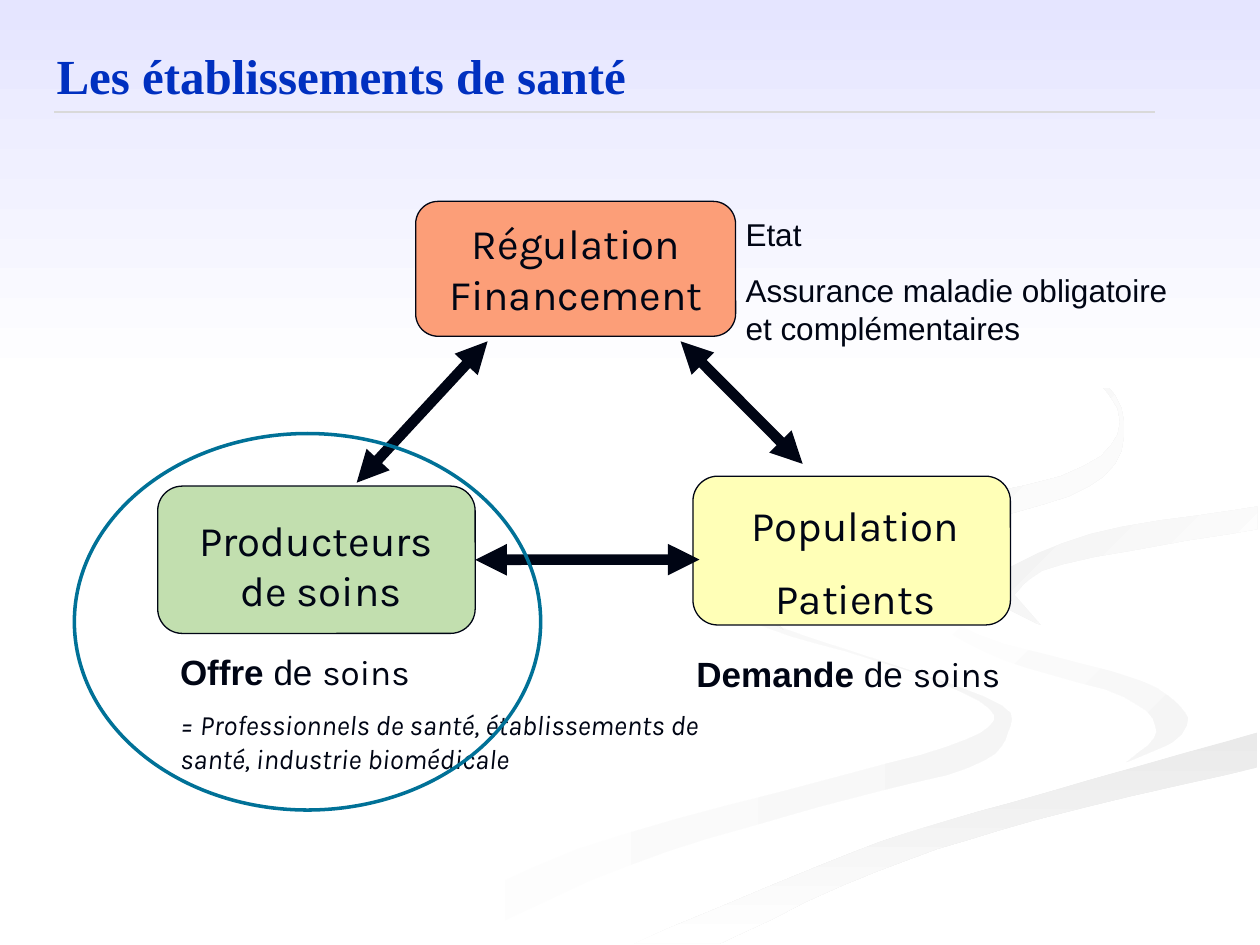
import pptx
import pptx.dml.color
import pptx.enum.shapes
import pptx.enum.text
import pptx.util
from lxml import etree
from pptx.oxml.ns import qn

Cm, Pt = pptx.util.Cm, pptx.util.Pt
RGBColor = pptx.dml.color.RGBColor
SHAPE = pptx.enum.shapes.MSO_SHAPE
ALIGN = pptx.enum.text.PP_ALIGN

INK = RGBColor.from_string("000514")
TITLE_BLUE = RGBColor.from_string("0030C0")
RULE_GREY = RGBColor.from_string("D9D9D9")
TEAL = RGBColor.from_string("007197")
YELLOW = RGBColor.from_string("FFFFB7")
GREEN = RGBColor.from_string("C2DFAF")
ORANGE = RGBColor.from_string("FC9E78")
WHITE = RGBColor.from_string("FFFFFF")
LAVENDER = RGBColor.from_string("E5E5FF")
GREY_F5 = RGBColor.from_string("F5F5F5")
GREY_F1 = RGBColor.from_string("F1F1F1")
GREY_ED = RGBColor.from_string("EDEDED")
GREY_EA = RGBColor.from_string("EAEAEA")

GRID = Cm(0.0254)  # unit of the ribbon knots
STEPS = 5  # straight pieces between two knots

# Ribbons: start colour, end colour, clockwise angle, knots of each smooth edge
RIBBONS = [
    (WHITE, GREY_F5, 0, [
        [(575, 459), (572, 476), (611, 499), (714, 530), (785, 562), (767, 587), (652, 620),
         (458, 674), (300, 749)],
        [(361, 749), (499, 687), (651, 640), (769, 609), (800, 581), (781, 553), (614, 496),
         (575, 464)]]),
    (WHITE, GREY_F5, 45, [
        [(724, 464), (733, 488), (797, 524), (892, 553), (918, 581), (894, 605)],
        [(932, 589), (943, 570), (905, 540), (792, 509), (733, 483)]]),
    (GREY_EA, WHITE, 90, [
        [(571, 749), (695, 692), (821, 651), (998, 609)],
        [(998, 581), (831, 629), (696, 669), (503, 749)]]),
    (WHITE, WHITE, 0, [
        [(725, 464), (775, 503), (905, 540), (943, 570), (902, 603), (743, 643), (477, 749)],
        [(503, 749), (630, 693), (765, 647), (999, 581)],
        [(999, 538), (866, 509), (781, 463), (865, 424), (999, 402)],
        [(999, 387), (808, 417), (725, 464)]]),
    (GREY_F1, WHITE, 45, [
        [(781, 460), (791, 478), (826, 496)],
        [(805, 472), (843, 448), (998, 420)],
        [(998, 402), (865, 424), (781, 460)]]),
    (GREY_ED, WHITE, 45, [
        [(762, 233), (846, 279), (889, 335), (842, 378), (676, 414), (577, 462), (622, 500)],
        [(593, 470), (649, 436), (786, 412), (876, 378), (890, 324), (843, 275), (762, 233)]]),
]


def smooth(knots):
    """Points of a Catmull-Rom curve through the knots."""
    ends = [knots[0], *knots, knots[-1]]
    points = [knots[0]]
    for before, start, end, after in zip(ends, ends[1:], ends[2:], ends[3:]):
        for step in range(1, STEPS + 1):
            t = step / STEPS
            points.append(tuple(
                b + ((c - a) * t + (2 * a - 5 * b + 4 * c - d) * t ** 2
                     + (3 * b - a - 3 * c + d) * t ** 3) / 2
                for a, b, c, d in zip(before, start, end, after)))
    return points


class Painter:
    """Holds the slide and the style shared by its elements."""

    ink = INK

    def __init__(self, page):
        self.page = page

    def blend(self, shape, first, last, angle):
        shape.shadow.inherit = False
        shape.line.fill.background()
        shape.fill.gradient()
        shape.fill.gradient_angle = (360 - angle) % 360
        for stop, color in zip(shape.fill.gradient_stops, (first, last)):
            stop.color.rgb = color

    def ribbon(self, first, last, angle, edges):
        points = [point for knots in edges for point in smooth(knots)]
        builder = self.page.shapes.build_freeform(*points[0], scale=GRID)
        builder.add_line_segments(points[1:], close=True)
        self.blend(builder.convert_to_shape(), first, last, angle)

    def backdrop(self, height, first, last):
        band = self.page.shapes.add_shape(SHAPE.RECTANGLE, 0, 0, Cm(25.4), Cm(height))
        self.blend(band, first, last, 90)

    def shape(self, kind, place, fill=None, line=INK, width=0.75):
        shape = self.page.shapes.add_shape(kind, *map(Cm, place))
        shape.shadow.inherit = False
        if fill is None:
            shape.fill.background()
        else:
            shape.fill.solid()
            shape.fill.fore_color.rgb = fill
        shape.line.color.rgb = line
        shape.line.width = Pt(width)
        return shape

    def line(self, start, end, color=INK, width=6, arrows=True):
        line = self.page.shapes.add_connector(
            pptx.enum.shapes.MSO_CONNECTOR.STRAIGHT, *map(Cm, start + end))
        line.line.color.rgb = color
        line.line.width = Pt(width)
        if arrows:
            for end_name in ("a:headEnd", "a:tailEnd"):
                etree.SubElement(line.line._get_or_add_ln(), qn(end_name), type="triangle")
        etree.SubElement(line._element.spPr, qn("a:effectLst"))
        return line

    def text(self, place, paras, size, font="Karla", color=None, align=ALIGN.LEFT, gap=0):
        """Each para is a list of (text, overrides) spans."""
        box = self.page.shapes.add_textbox(*map(Cm, place))
        frame = box.text_frame
        frame.word_wrap = True
        for number, spans in enumerate(paras):
            para = frame.add_paragraph() if number else frame.paragraphs[0]
            para.alignment = align
            para.space_before = Pt(gap if number else 0)
            for words, look in spans:
                span = para.add_run()
                span.text = words
                span.font.name = look.get("font", font)
                span.font.size = Pt(look.get("size", size))
                span.font.bold = look.get("bold", False)
                span.font.italic = look.get("italic", False)
                span.font.color.rgb = color or self.ink


def main():
    deck = pptx.Presentation()
    deck.slide_width, deck.slide_height = Cm(25.4), Cm(19.05)
    painter = Painter(deck.slides.add_slide(deck.slide_layouts[6]))

    # Background
    for ribbon in RIBBONS:
        painter.ribbon(*ribbon)
    painter.backdrop(7.82, LAVENDER, WHITE)

    # Title and rule
    painter.line((1.09, 2.26), (23.29, 2.26), RULE_GREY, 1.5, arrows=False)
    painter.text((0.89, 0.8, 23.01, 1.72), [[("Les établissements de santé", {"bold": True})]],
                 28, "Times New Roman", TITLE_BLUE)

    # Three actors: box, fill, label place, label lines, gap
    actors = [
        ((13.97, 9.6, 6.4, 3), YELLOW, (13.74, 9.95, 7.01, 2.82), ("Population", "Patients"), 13),
        ((3.18, 9.8, 6.4, 2.97), GREEN, (2.97, 10.24, 7.01, 2.31), ("Producteurs ", "de soins"), 0),
        ((8.38, 4.06, 6.45, 2.72), ORANGE, (8.08, 4.27, 7.06, 2.31), ("Régulation", "Financement"), 0),
    ]
    boxes = []
    for place, fill, label_place, lines, gap in actors:
        boxes.append(painter.shape(SHAPE.ROUNDED_RECTANGLE, place, fill))
        painter.text(label_place, [[(words, {})] for words in lines], 24,
                     align=ALIGN.CENTER, gap=gap)

    # Double arrows between the actors
    exchange = painter.line((9.58, 11.28), (14.1, 11.28))
    exchange.begin_connect(boxes[1], 3)
    painter.line((13.72, 6.88), (16.18, 9.35))
    painter.line((7.19, 9.73), (9.83, 6.88))

    # Comments beside the boxes
    def care(word):
        return [(word, {"font": "Arial", "bold": True}), (" de ", {"font": "Arial"}), ("soins", {})]

    painter.text((13.79, 13.02, 8.08, 1.12), [care("Demande")], 20)
    detail = "= Professionnels de santé, établissements de santé, industrie biomédicale"
    painter.text((3.38, 12.98, 11.76, 2.82),
                 [care("Offre"), [(detail, {"size": 16, "italic": True})]], 20, gap=9)
    painter.text((14.78, 4.22, 9.14, 2.95),
                 [[("Etat", {})], [("Assurance maladie obligatoire et complémentaires", {})]],
                 18, "Arial", gap=10)

    # Ring around the care providers
    painter.shape(SHAPE.OVAL, (1.5, 8.74, 9.4, 7.59), line=TEAL, width=2)

    deck.save("out.pptx")


if __name__ == "__main__":
    main()
